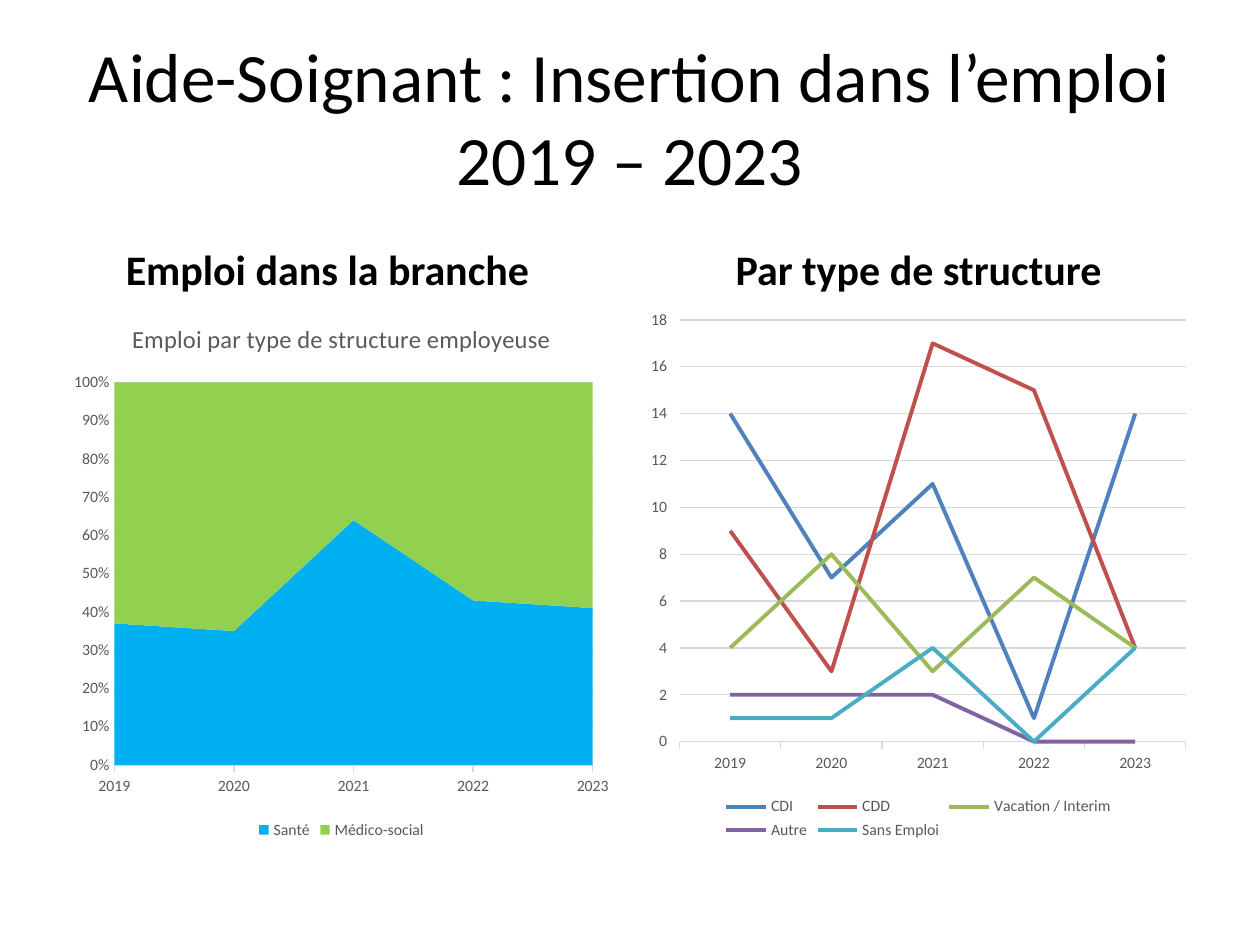
from pptx import Presentation
from pptx import util as u
from pptx.chart.data import CategoryChartData
from pptx.dml.color import RGBColor
from pptx.enum import chart as ch, text

FONT = "Calibri"
BLACK, GREY, PALE = "000000", "595959", "D9D9D9"
YEARS = [2019, 2020, 2021, 2022, 2023]
LEFT_CHART, RIGHT_CHART = 0.5, 5.08
CHART_TOP, CHART_WIDTH, CHART_HEIGHT = 2.38, 4.42, 4.32

EMPLOYERS = [
    ("Santé", [37, 35, 64, 43, 41], "00B0F0"),
    ("Médico-social", [63, 65, 36, 57, 59], "92D050"),
]
CONTRACTS = [
    ("CDI", [14, 7, 11, 1, 14], "4F81BD"),
    ("CDD", [9, 3, 17, 15, 4], "C0504D"),
    ("Vacation / Interim", [4, 8, 3, 7, 4], "9BBB59"),
    ("Autre", [2, 2, 2, 0, 0], "8064A2"),
    ("Sans Emploi", [1, 1, 4, 0, 4], "4BACC6"),
]


def rgb(value):
    return RGBColor.from_string(value)


def style_font(font, size, color, bold=False):
    font.name = FONT
    font.size = u.Pt(size)
    font.bold = bold
    font.color.rgb = rgb(color)


def style_line(line, color, width=0.75):
    line.color.rgb = rgb(color)
    line.width = u.Pt(width)


def fill_title(slide, lines):
    title = slide.shapes.title
    title.left, title.top = u.Inches(0.5), u.Inches(0.3)
    title.width, title.height = u.Inches(9), u.Inches(1.25)
    frame = title.text_frame
    frame.word_wrap = True
    frame.auto_size = text.MSO_AUTO_SIZE.NONE
    frame.vertical_anchor = text.MSO_ANCHOR.MIDDLE
    paragraph = frame.paragraphs[0]
    paragraph.alignment = text.PP_ALIGN.CENTER
    for index, line in enumerate(lines):
        if index:
            paragraph.add_line_break()
        run = paragraph.add_run()
        run.text = line
        style_font(run.font, 39.6, BLACK)


def add_heading(slide, words, left, width):
    box = slide.shapes.add_textbox(
        u.Inches(left), u.Inches(1.68), u.Inches(width), u.Inches(0.7))
    frame = box.text_frame
    frame.word_wrap = True
    frame.vertical_anchor = text.MSO_ANCHOR.BOTTOM
    paragraph = frame.paragraphs[0]
    paragraph.alignment = text.PP_ALIGN.CENTER
    run = paragraph.add_run()
    run.text = words
    style_font(run.font, 24, BLACK, bold=True)


def style_axes(chart, value_format, value_tick):
    years, values = chart.category_axis, chart.value_axis
    for axis, number_format in ((years, "#,##0"), (values, value_format)):
        style_font(axis.tick_labels.font, 9, GREY)
        axis.tick_labels.number_format = number_format
        axis.tick_labels.number_format_is_linked = False
        axis.minor_tick_mark = ch.XL_TICK_MARK.NONE
    years.major_tick_mark = ch.XL_TICK_MARK.OUTSIDE
    style_line(years.format.line, PALE)
    values.major_tick_mark = value_tick
    values.format.line.fill.background()
    values.has_major_gridlines = True
    style_line(values.major_gridlines.format.line, PALE)


def add_year_chart(slide, kind, left, series, value_format, value_tick):
    data = CategoryChartData(number_format="#,##0")
    data.categories = YEARS
    for name, values, _ in series:
        data.add_series(name, values)
    chart = slide.shapes.add_chart(
        kind, u.Inches(left), u.Inches(CHART_TOP),
        u.Inches(CHART_WIDTH), u.Inches(CHART_HEIGHT), data).chart
    style_font(chart.font, 10, BLACK)
    chart.has_title = False
    chart.has_legend = True
    chart.legend.position = ch.XL_LEGEND_POSITION.BOTTOM
    chart.legend.include_in_layout = False
    style_font(chart.legend.font, 9, GREY)
    style_axes(chart, value_format, value_tick)
    chart.plots[0].vary_by_categories = False
    return chart


def add_contract_lines(slide):
    chart = add_year_chart(slide, ch.XL_CHART_TYPE.LINE, RIGHT_CHART, CONTRACTS,
                           "#,##0", ch.XL_TICK_MARK.OUTSIDE)
    for line, (_, _, color) in zip(chart.plots[0].series, CONTRACTS):
        line.smooth = False
        style_line(line.format.line, color, 2.25)


def add_employer_areas(slide, heading):
    chart = add_year_chart(slide, ch.XL_CHART_TYPE.AREA_STACKED_100, LEFT_CHART,
                           EMPLOYERS, "0%", ch.XL_TICK_MARK.NONE)
    for area, (_, _, color) in zip(chart.plots[0].series, EMPLOYERS):
        area.format.fill.solid()
        area.format.fill.fore_color.rgb = rgb(color)
        area.format.line.fill.background()
    values = chart.value_axis
    values.maximum_scale, values.major_unit = 1, 0.1
    # The areas start and end on the plot edges.
    for crossing in chart.element.xpath(".//c:valAx/c:crossBetween"):
        crossing.set("val", "midCat")
    chart.has_title = True
    chart.chart_title.include_in_layout = False
    run = chart.chart_title.text_frame.paragraphs[0].add_run()
    run.text = heading
    style_font(run.font, 14, GREY)


def main():
    deck = Presentation()
    deck.slide_width, deck.slide_height = u.Inches(10), u.Inches(7.5)
    slide = deck.slides.add_slide(deck.slide_layouts[5])
    fill_title(slide, ["Aide-Soignant : Insertion dans l’emploi", "2019 – 2023"])
    add_heading(slide, "Emploi dans la branche", 0.28, 4.64)
    add_heading(slide, "Par type de structure", RIGHT_CHART, CHART_WIDTH)
    add_contract_lines(slide)
    add_employer_areas(slide, "Emploi par type de structure employeuse")
    deck.save("out.pptx")


if __name__ == "__main__":
    main()
